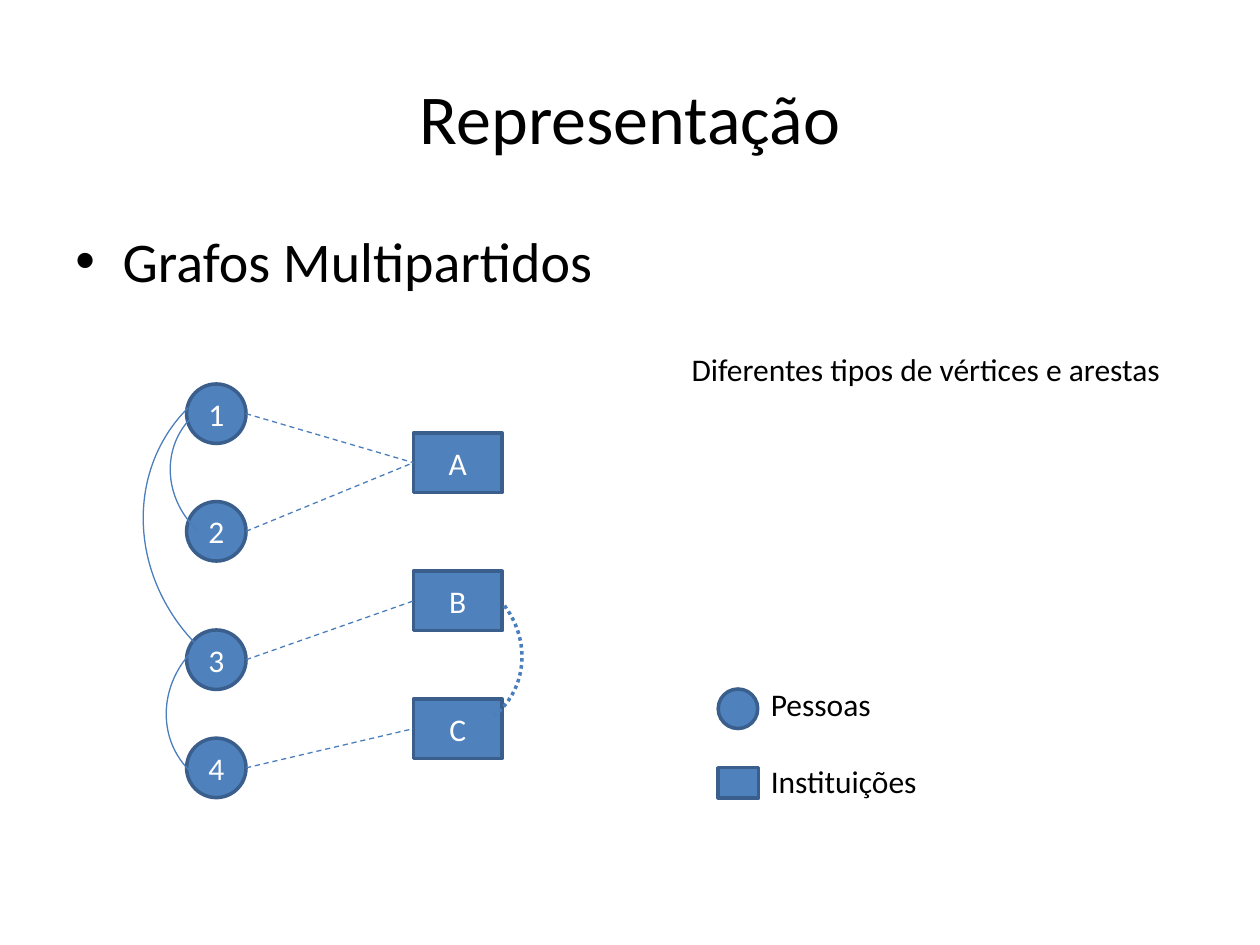
from dataclasses import dataclass
from typing import Optional

from lxml.etree import SubElement
from pptx import Presentation
from pptx.dml.color import RGBColor
from pptx.enum.dml import MSO_LINE
from pptx.enum.shapes import MSO_CONNECTOR, MSO_SHAPE
from pptx.enum.text import MSO_ANCHOR, MSO_AUTO_SIZE, PP_ALIGN
from pptx.oxml.ns import qn
from pptx.util import Pt


@dataclass(frozen=True)
class Theme:
    font: str = "Calibri"
    ink: RGBColor = RGBColor(0x00, 0x00, 0x00)
    light: RGBColor = RGBColor(0xFF, 0xFF, 0xFF)
    fill: RGBColor = RGBColor(0x4F, 0x81, 0xBD)
    outline: RGBColor = RGBColor(0x3A, 0x5F, 0x8C)
    edge: RGBColor = RGBColor(0x4B, 0x7E, 0xBC)
    title: float = 40
    body: float = 32
    label: float = 18
    thick: float = 2
    thin: float = 0.75


THEME = Theme()


@dataclass(frozen=True)
class Node:
    kind: MSO_SHAPE
    left: float
    top: float
    width: float
    height: float
    label: str = ""

    @property
    def middle(self) -> float:
        return self.top + self.height / 2


@dataclass(frozen=True)
class Arc:
    left: float
    top: float
    width: float
    height: float
    rotation: float
    weight: float = THEME.thin
    dash: Optional[MSO_LINE] = None


@dataclass(frozen=True)
class Label:
    text: str
    left: float
    top: float
    width: float


# Vertices: people in one column, institutions in the other
PEOPLE = {
    name: Node(MSO_SHAPE.OVAL, 106.6, top, 34, 34, name)
    for name, top in (("1", 219.4), ("2", 286.6), ("3", 360), ("4", 421.8))
}
INSTITUTIONS = {
    name: Node(MSO_SHAPE.RECTANGLE, 236.2, top, 50.8, 34, name)
    for name, top in (("A", 247.4), ("B", 326.4), ("C", 399.4))
}
LEGEND = (
    Node(MSO_SHAPE.OVAL, 410.4, 393.7, 22.6, 22.6),
    Node(MSO_SHAPE.RECTANGLE, 410.4, 438.7, 23.2, 17.3),
)

# Edges: person to institution, and within one kind
MEMBERSHIPS = (("1", "A"), ("2", "A"), ("3", "B"), ("4", "C"))
ARCS = (
    Arc(95.8, 228.2, 92.9, 86.4, 222.9),
    Arc(77.8, 212.4, 198.7, 182.9, 226.1),
    Arc(96.5, 355, 92.9, 99.4, 222.9),
    Arc(207.4, 329, 92.9, 86.4, 52.8, THEME.thick, MSO_LINE.ROUND_DOT),
)
ARC_SWEEP = (162, 215.67)

LABELS = (
    Label("Pessoas", 433.4, 388.1, 72),
    Label("Instituições", 433.4, 432, 98.6),
    Label("Diferentes tipos de vértices e arestas", 388.1, 196.6, 285.8),
)


def write(frame, text: str, *, size: float, color: RGBColor = THEME.ink,
          align: PP_ALIGN = PP_ALIGN.LEFT, anchor: MSO_ANCHOR = MSO_ANCHOR.TOP,
          wrap: bool = True):
    """Fill a text frame with one formatted paragraph and return it."""
    frame.word_wrap = wrap
    frame.vertical_anchor = anchor
    para = frame.paragraphs[0]
    para.alignment = align
    span = para.add_run()
    span.text = text
    span.font.name = THEME.font
    span.font.size = Pt(size)
    span.font.color.rgb = color
    return para


def add_bullet(para, indent: float) -> None:
    properties = para._p.get_or_add_pPr()
    properties.set("marL", str(Pt(indent)))
    properties.set("indent", str(-Pt(indent)))
    SubElement(properties, qn("a:buFont"), typeface="Arial")
    SubElement(properties, qn("a:buChar"), char="•")


def style_line(line, color: RGBColor, weight: float, dash: Optional[MSO_LINE] = None) -> None:
    line.color.rgb = color
    line.width = Pt(weight)
    if dash is not None:
        line.dash_style = dash


def draw_node(page, node: Node) -> None:
    shape = page.shapes.add_shape(
        node.kind, Pt(node.left), Pt(node.top), Pt(node.width), Pt(node.height))
    shape.shadow.inherit = False
    shape.fill.solid()
    shape.fill.fore_color.rgb = THEME.fill
    style_line(shape.line, THEME.outline, THEME.thick)
    if node.label:
        write(shape.text_frame, node.label, size=THEME.label, color=THEME.light,
              align=PP_ALIGN.CENTER, anchor=MSO_ANCHOR.MIDDLE)


def draw_membership(page, person: Node, institution: Node) -> None:
    connector = page.shapes.add_connector(
        MSO_CONNECTOR.STRAIGHT, Pt(person.left + person.width), Pt(person.middle),
        Pt(institution.left), Pt(institution.middle))
    style_line(connector.line, THEME.edge, THEME.thin, MSO_LINE.DASH)
    SubElement(connector._element.spPr, qn("a:effectLst"))


def draw_arc(page, arc: Arc) -> None:
    shape = page.shapes.add_shape(
        MSO_SHAPE.ARC, Pt(arc.left), Pt(arc.top), Pt(arc.width), Pt(arc.height))
    shape.adjustments[0], shape.adjustments[1] = ARC_SWEEP
    shape.rotation = arc.rotation
    shape.shadow.inherit = False
    shape.fill.background()
    style_line(shape.line, THEME.edge, arc.weight, arc.dash)


def draw_label(page, label: Label) -> None:
    box = page.shapes.add_textbox(Pt(label.left), Pt(label.top), Pt(label.width), Pt(29))
    write(box.text_frame, label.text, size=THEME.label, wrap=False)
    box.text_frame.auto_size = MSO_AUTO_SIZE.SHAPE_TO_FIT_TEXT


def main() -> None:
    deck = Presentation()
    deck.slide_width, deck.slide_height = Pt(720), Pt(540)
    page = deck.slides.add_slide(deck.slide_layouts.get_by_name("Title Only"))

    # Title and topic
    title = page.shapes.title
    title.left, title.top, title.width, title.height = Pt(36), Pt(21.6), Pt(648), Pt(90)
    write(title.text_frame, "Representação", size=THEME.title,
          align=PP_ALIGN.CENTER, anchor=MSO_ANCHOR.MIDDLE)
    body = page.shapes.add_textbox(Pt(36), Pt(126), Pt(648), Pt(356.4))
    topic = write(body.text_frame, "Grafos Multipartidos", size=THEME.body)
    topic.space_before = Pt(2)
    add_bullet(topic, 27)

    # Graph and legend
    for node in (*PEOPLE.values(), *INSTITUTIONS.values(), *LEGEND):
        draw_node(page, node)
    for person, institution in MEMBERSHIPS:
        draw_membership(page, PEOPLE[person], INSTITUTIONS[institution])
    for arc in ARCS:
        draw_arc(page, arc)
    for label in LABELS:
        draw_label(page, label)

    deck.save("out.pptx")


if __name__ == "__main__":
    main()
